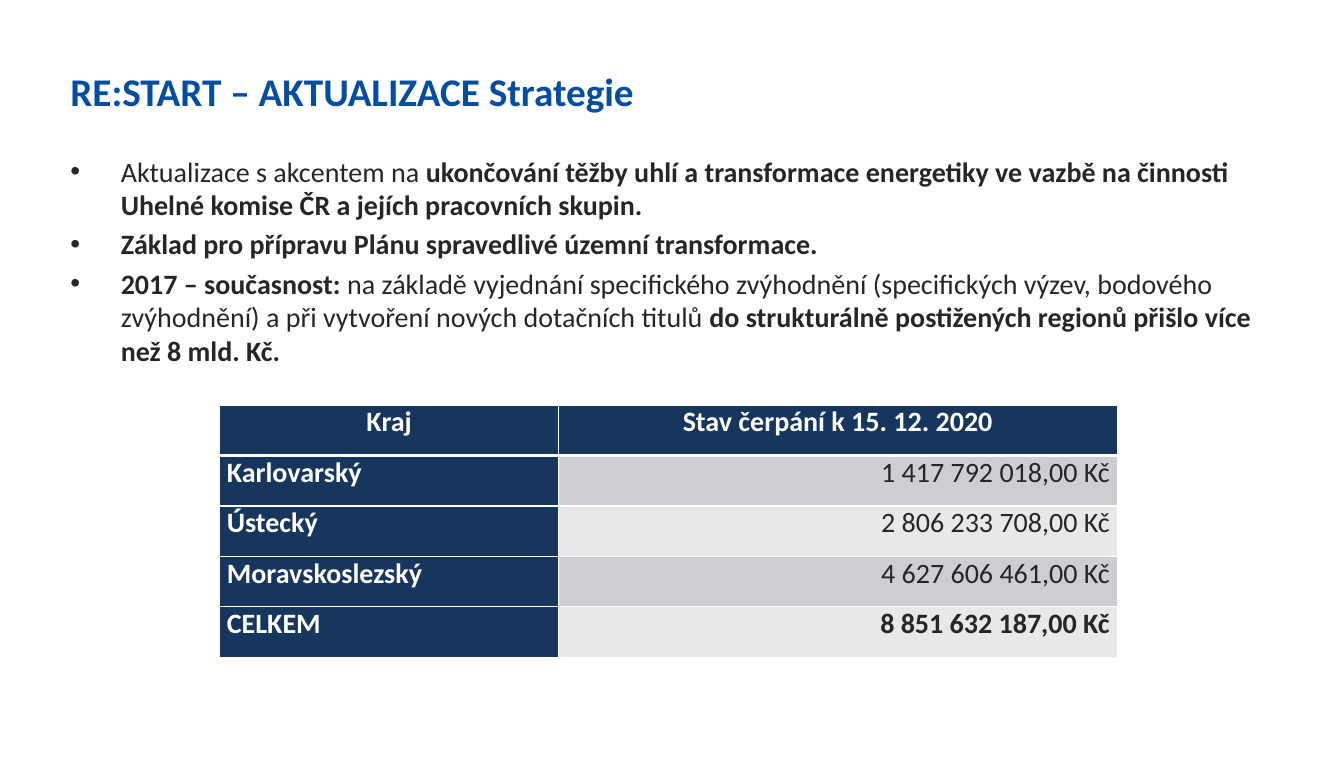
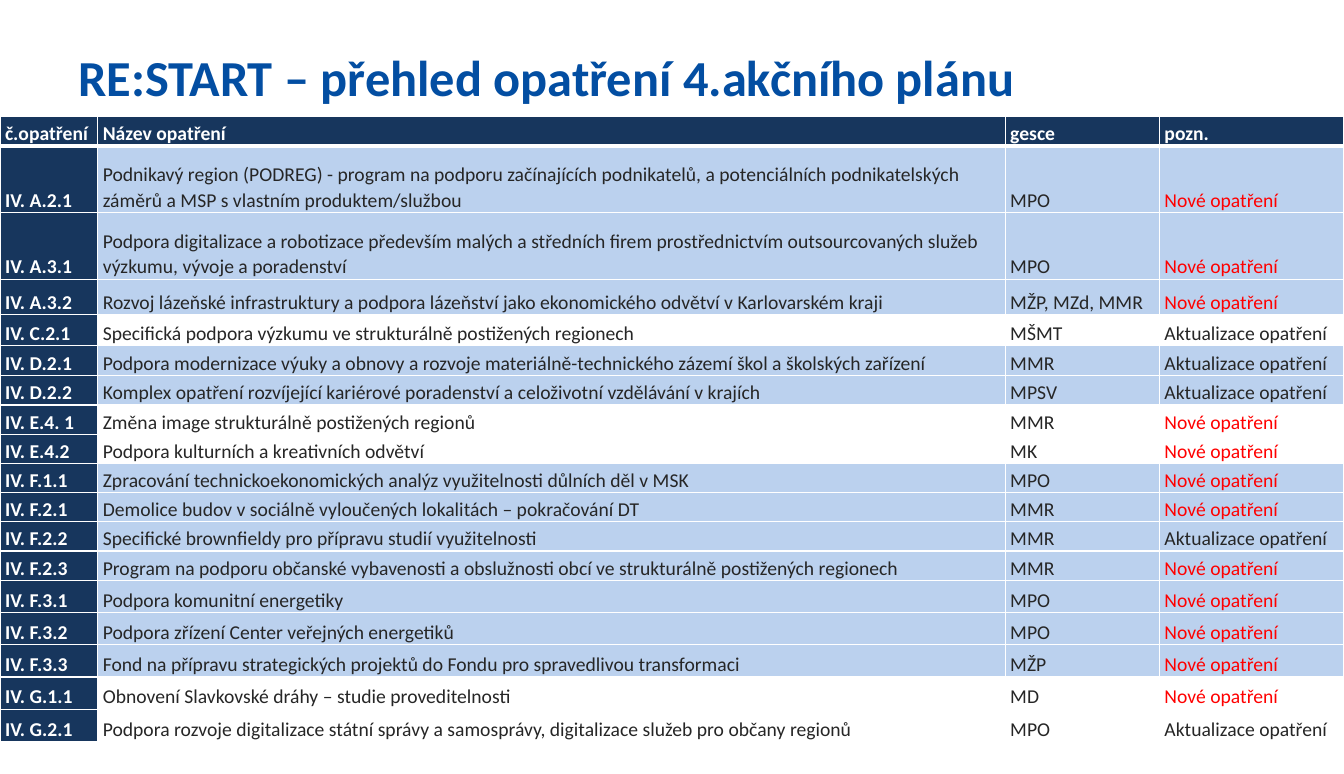
from lxml import etree
from pptx import Presentation
from pptx.dml import color
from pptx.enum import text
from pptx.oxml import ns
from pptx.util import Inches, Pt

BLUE, NAVY, INK, RED, WHITE = "034EA2", "17365D", "262626", "FF0000", "FFFFFF"
GREYS = ("CCCED2", "E8E8EA")
PALE_BLUE = "BBD1EE"
LEFT, CENTER, RIGHT = text.PP_ALIGN.LEFT, text.PP_ALIGN.CENTER, text.PP_ALIGN.RIGHT
TOP, BOTTOM = text.MSO_ANCHOR.TOP, text.MSO_ANCHOR.BOTTOM


def rgb(value):
    return color.RGBColor.from_string(value)


def add_bullet(p, indent=0.5):
    pPr = p._p.get_or_add_pPr()
    pPr.set("marL", str(Inches(indent)))
    pPr.set("indent", str(-Inches(indent)))
    etree.SubElement(pPr, ns.qn("a:buFont"), typeface="Arial")
    etree.SubElement(pPr, ns.qn("a:buChar"), char="•")


def write(p, content, size=20, ink=INK, bold=False, align=LEFT,
          bullet=False, before=0, spacing=None):
    """Fill a paragraph; content is a string or a list of (text, bold) runs."""
    if bullet:
        add_bullet(p)
    p.alignment = align
    if before:
        p.space_before = Pt(before)
    if spacing:
        p.line_spacing = spacing
    runs = [(content, bold)] if isinstance(content, str) else content
    for words, heavy in runs:
        r = p.add_run()
        r.text = words
        r.font.name, r.font.size, r.font.bold = "Calibri", Pt(size), heavy
        r.font.color.rgb = rgb(ink)


def set_borders(cell, top=1, bottom=1):
    """Draw white borders; widths in points."""
    tcPr = cell._tc.get_or_add_tcPr()
    sides = (("a:lnL", 1), ("a:lnR", 1), ("a:lnT", top), ("a:lnB", bottom))
    for i, (tag, width) in enumerate(sides):
        ln = etree.Element(ns.qn(tag), w=str(Pt(width)))
        fill = etree.SubElement(ln, ns.qn("a:solidFill"))
        etree.SubElement(fill, ns.qn("a:srgbClr"), val=WHITE)
        tcPr.insert(i, ln)


class Deck:
    def __init__(self, width, height):
        self.prs = Presentation()
        self.prs.slide_width, self.prs.slide_height = Inches(width), Inches(height)
        self.s = None

    def new_slide(self):
        self.s = self.prs.slides.add_slide(self.prs.slide_layouts[6])

    def text_box(self, left, top, width, height):
        sp = self.s.shapes.add_textbox(*map(Inches, (left, top, width, height)))
        sp.text_frame.word_wrap = True
        return sp.text_frame

    def title(self, words, left, top, size):
        tf = self.text_box(left, top, 12, 0.7)
        write(tf.paragraphs[0], words, size=size, ink=BLUE, bold=True)

    def bullets(self, items, left, top, width, height):
        tf = self.text_box(left, top, width, height)
        for i, runs in enumerate(items):
            p = tf.add_paragraph() if i else tf.paragraphs[0]
            write(p, runs, bullet=True, before=4 if i else 0)

    def table(self, rows, left, top, widths, heights, style,
              inset=0.07, anchor=TOP, size=20, spacing=None):
        """Draw a table; style(row, column, row data) gives fill and text format."""
        frame = self.s.shapes.add_table(
            len(rows), len(widths), Inches(left), Inches(top),
            Inches(sum(widths)), Inches(sum(heights)))
        table = frame.table
        table.horz_banding = False
        for column, width in zip(table.columns, widths):
            column.width = Inches(width)
        for row, height in zip(table.rows, heights):
            row.height = Inches(height)
        for i, row in enumerate(rows):
            for j, words in enumerate(row):
                cell = table.cell(i, j)
                fill, look = style(i, j, row)
                if i == 0 or j == 0:
                    fill = NAVY
                    look = {**look, "ink": WHITE, "bold": True}
                cell.fill.solid()
                cell.fill.fore_color.rgb = rgb(fill)
                set_borders(cell, top=3 if i == 1 else 1, bottom=3 if i == 0 else 1)
                cell.margin_left = cell.margin_right = Inches(inset)
                cell.margin_top = cell.margin_bottom = 0
                cell.vertical_anchor = anchor
                write(cell.text_frame.paragraphs[0], words,
                      size=size, spacing=spacing, **look)


STRATEGY = [
    [("Aktualizace s akcentem na", False),
     (" ukončování těžby uhlí a transformace energetiky ve vazbě na činnosti "
      "Uhelné komise ČR a jejích pracovních skupin.", True)],
    [("Základ pro přípravu Plánu spravedlivé územní transformace.", True)],
    [("2017 – současnost: ", True),
     ("na základě vyjednání specifického zvýhodnění (specifických výzev, bodového "
      "zvýhodnění) a při vytvoření nových dotačních titulů ", False),
     ("do strukturálně postižených regionů přišlo více než 8 mld. Kč.", True)],
]

SPENDING = [
    ("Kraj", "Stav čerpání k 15. 12. 2020"),
    ("Karlovarský", "1 417 792 018,00 Kč"),
    ("Ústecký", "2 806 233 708,00 Kč"),
    ("Moravskoslezský", "4 627 606 461,00 Kč"),
    ("CELKEM", "8 851 632 187,00 Kč"),
]

NEW, UPDATE = "Nové opatření", "Aktualizace opatření"
MEASURES = [
    ("č.opatření", "Název opatření", "gesce", "pozn."),
    ("IV. A.2.1", "Podnikavý region (PODREG) - program na podporu začínajících podnikatelů, "
     "a potenciálních podnikatelských záměrů a MSP s vlastním produktem/službou", "MPO", NEW),
    ("IV. A.3.1", "Podpora digitalizace a robotizace především malých a středních firem "
     "prostřednictvím outsourcovaných služeb výzkumu, vývoje a poradenství", "MPO", NEW),
    ("IV. A.3.2", "Rozvoj lázeňské infrastruktury a podpora lázeňství jako ekonomického "
     "odvětví v Karlovarském kraji", "MŽP, MZd, MMR", NEW),
    ("IV. C.2.1", "Specifická podpora výzkumu ve strukturálně postižených regionech",
     "MŠMT", UPDATE),
    ("IV. D.2.1", "Podpora modernizace výuky a obnovy a rozvoje materiálně-technického "
     "zázemí škol a školských zařízení", "MMR", UPDATE),
    ("IV. D.2.2", "Komplex opatření rozvíjející kariérové poradenství a celoživotní "
     "vzdělávání v krajích", "MPSV", UPDATE),
    ("IV. E.4. 1", "Změna image strukturálně postižených regionů", "MMR", NEW),
    ("IV. E.4.2", "Podpora kulturních a kreativních odvětví", "MK", NEW),
    ("IV. F.1.1", "Zpracování technickoekonomických analýz využitelnosti důlních děl v MSK",
     "MPO", NEW),
    ("IV. F.2.1", "Demolice budov v sociálně vyloučených lokalitách – pokračování DT",
     "MMR", NEW),
    ("IV. F.2.2", "Specifické brownfieldy pro přípravu studií využitelnosti", "MMR", UPDATE),
    ("IV. F.2.3", "Program na podporu občanské vybavenosti a obslužnosti obcí ve "
     "strukturálně postižených regionech", "MMR", NEW),
    ("IV. F.3.1", "Podpora komunitní energetiky", "MPO", NEW),
    ("IV. F.3.2", "Podpora zřízení Center veřejných energetiků", "MPO", NEW),
    ("IV. F.3.3", "Fond na přípravu strategických projektů do Fondu pro spravedlivou "
     "transformaci", "MŽP", NEW),
    ("IV. G.1.1", "Obnovení Slavkovské dráhy – studie proveditelnosti", "MD", NEW),
    ("IV. G.2.1", "Podpora rozvoje digitalizace státní správy a samosprávy, digitalizace "
     "služeb pro občany regionů", "MPO", UPDATE),
]
MEASURE_HEIGHTS = [0.29, 0.66, 0.66, 0.35, 0.31, 0.3] + [0.29] * 7 + [0.32] * 5


def spending_style(i, j, row):
    align = CENTER if i == 0 else RIGHT if j else LEFT
    return GREYS[(i + 1) % 2], {"align": align, "bold": row[0] == "CELKEM"}


def measure_style(i, j, row):
    """Shade the groups A, D and F; mark new measures in red."""
    shaded = row[0].startswith(("IV. A", "IV. D", "IV. F"))
    return PALE_BLUE if shaded else WHITE, {"ink": RED if row[j] == NEW else INK}


def main():
    deck = Deck(13.33, 7.68)

    deck.new_slide()
    deck.title("RE:START – AKTUALIZACE Strategie", 0.6, 0.62, size=28)
    deck.bullets(STRATEGY, 0.6, 1.48, 12, 2.3)
    deck.table(SPENDING, 2.18, 4.02, [3.36, 5.54], [0.5] * len(SPENDING), spending_style)

    deck.new_slide()
    deck.title("RE:START – přehled opatření 4.akčního plánu", 0.68, 0.41, size=36)
    deck.table(MEASURES, 0, 1.16, [0.97, 9, 1.53, 1.83], MEASURE_HEIGHTS, measure_style,
               inset=0.05, anchor=BOTTOM, size=14, spacing=1.07)

    deck.prs.save("out.pptx")


if __name__ == "__main__":
    main()
